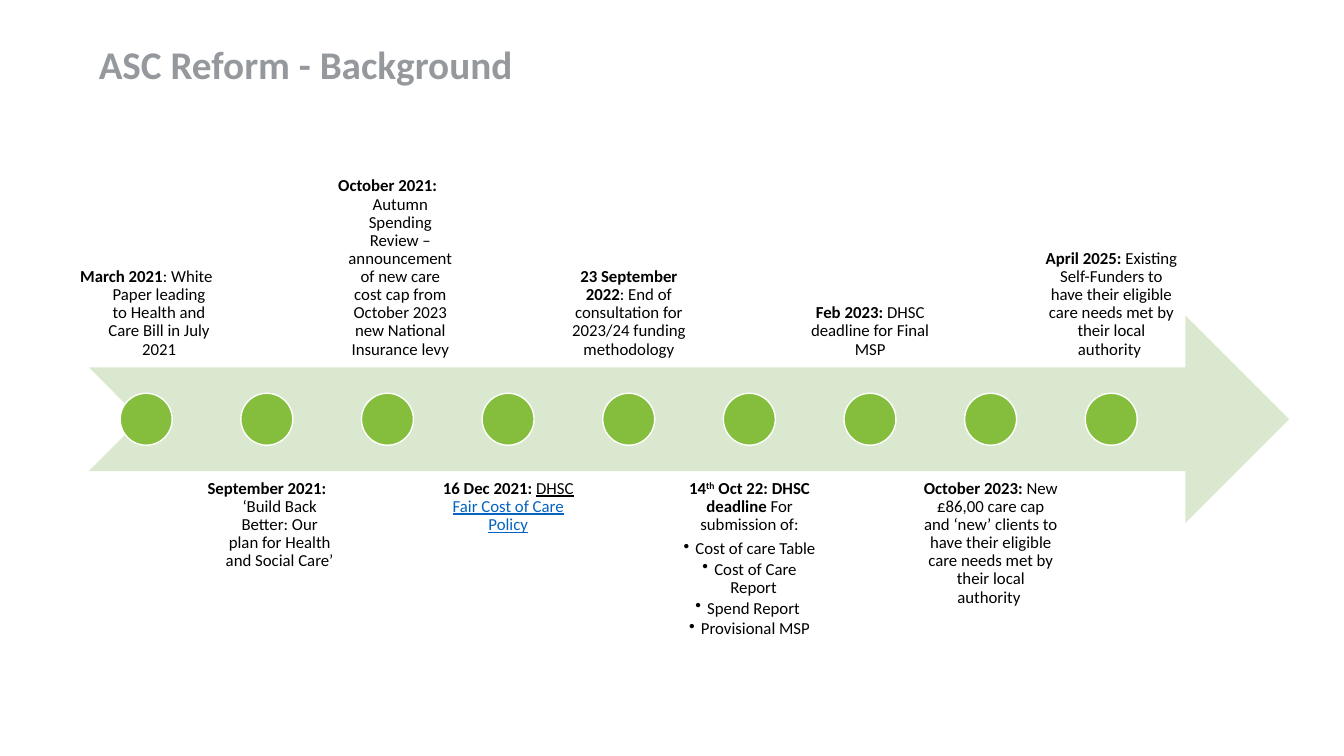
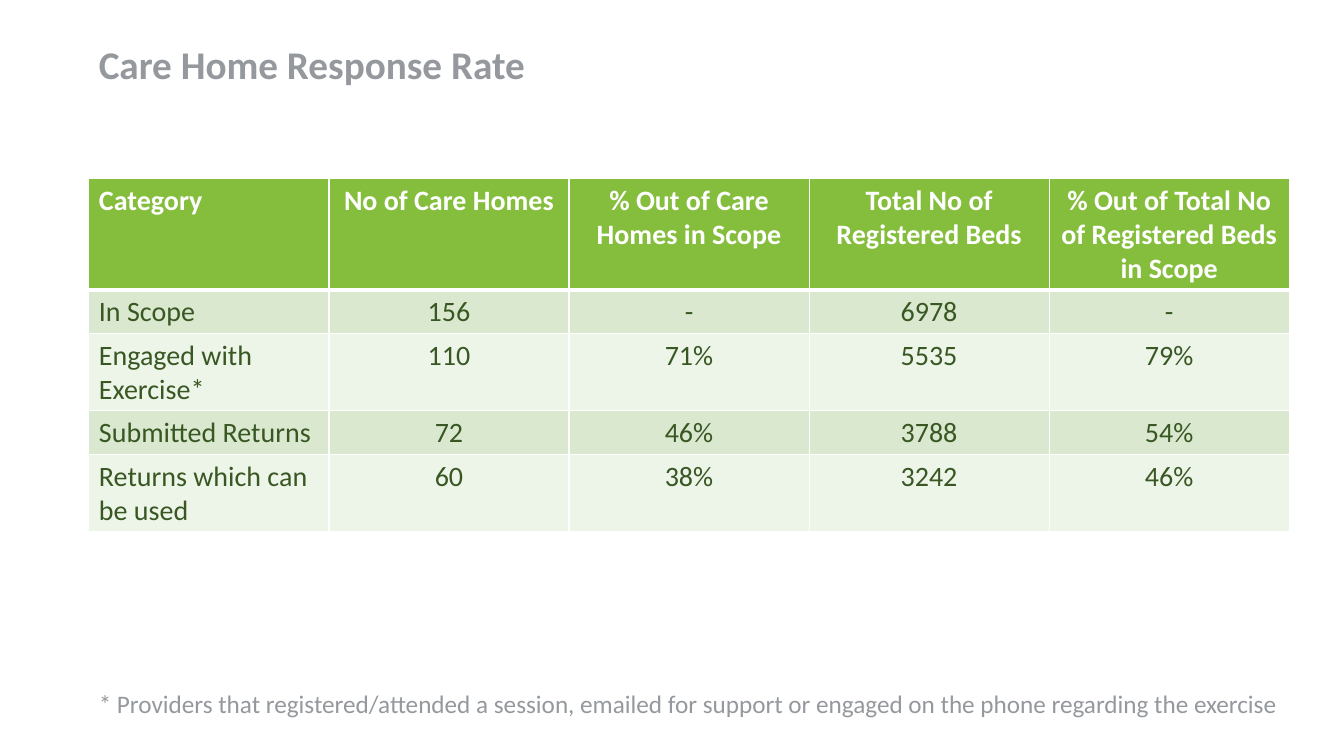
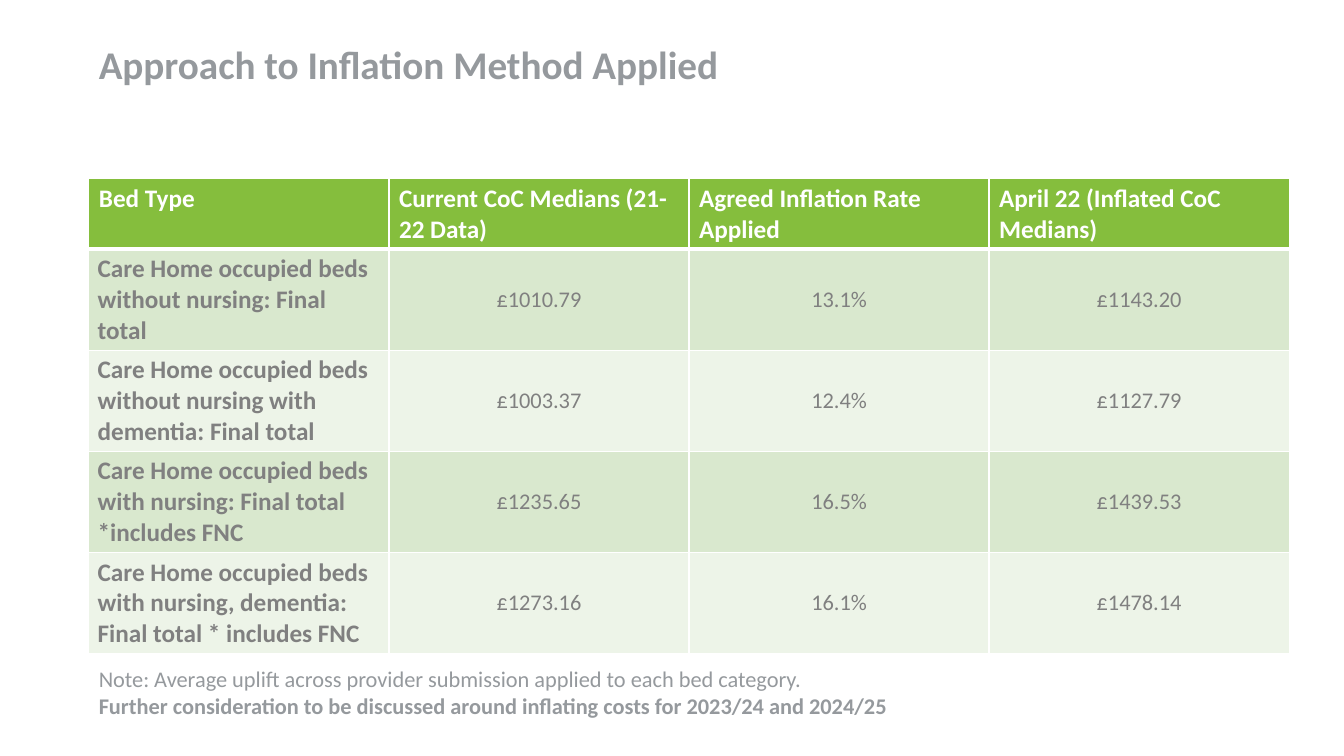
from dataclasses import dataclass
from lxml import etree
from pptx import Presentation
from pptx.dml.color import RGBColor
from pptx.enum.shapes import MSO_SHAPE
from pptx.enum.text import MSO_ANCHOR, PP_ALIGN
from pptx.oxml.ns import qn
from pptx.util import Cm, Pt

ARROW, DOT = MSO_SHAPE.NOTCHED_RIGHT_ARROW, MSO_SHAPE.OVAL
LEFT, CENTER = PP_ALIGN.LEFT, PP_ALIGN.CENTER
TOP, MIDDLE, BOTTOM = MSO_ANCHOR.TOP, MSO_ANCHOR.MIDDLE, MSO_ANCHOR.BOTTOM


@dataclass(frozen=True)
class Theme:
    font: str = "Calibri"
    green: str = "85BE3D"
    band: str = "D9E8CE"
    pale: str = "EDF4E8"
    forest: str = "385723"
    grey: str = "95999D"
    label: str = "808080"
    link: str = "0563C1"
    white: str = "FFFFFF"
    black: str = "000000"
    title_size: int = 28
    large: int = 20
    medium: int = 18
    small: int = 16
    event_size: int = 12
    left: float = 2.24
    width: float = 30.25
    table_top: float = 4.5


@dataclass(frozen=True)
class Words:
    text: str
    bold: bool = False
    color: str = ""
    underline: bool = False
    raised: bool = False


class Deck:
    def __init__(self, theme):
        self.theme = theme
        self.prs = Presentation()
        self.prs.slide_width, self.prs.slide_height = Cm(33.87), Cm(19.05)
        self.slide = None

    def new_slide(self, title):
        self.slide = self.prs.slides.add_slide(self.prs.slide_layouts[6])
        frame = self.text_box(self.theme.left, 1.02, 23.16, 2.49)
        paragraph = frame.paragraphs[0]
        paragraph.line_spacing = 0.9
        self.add_words(paragraph, [Words(title, bold=True)],
                       self.theme.title_size, self.theme.grey)

    def text_box(self, left, top, width, height, anchor=TOP, inset=None):
        box = self.slide.shapes.add_textbox(Cm(left), Cm(top), Cm(width), Cm(height))
        frame = box.text_frame
        frame.word_wrap = True
        frame.vertical_anchor = anchor
        if inset is not None:
            frame.margin_left = frame.margin_right = Cm(inset)
            frame.margin_top = frame.margin_bottom = Cm(inset)
        return frame

    def add_words(self, paragraph, pieces, size, color, align=LEFT):
        paragraph.alignment = align
        for piece in pieces:
            run = paragraph.add_run()
            run.text = piece.text
            font = run.font
            font.name, font.size = self.theme.font, Pt(size)
            font.bold = piece.bold
            font.color.rgb = RGBColor.from_string(piece.color or color)
            if piece.underline:
                font.underline = True
            if piece.raised:
                run._r.get_or_add_rPr().set("baseline", "30000")

    def indent(self, paragraph, margin, first_line):
        properties = paragraph._p.get_or_add_pPr()
        properties.set("marL", str(Cm(margin)))
        properties.set("indent", str(Cm(first_line)))
        return properties

    def shape(self, preset, left, top, width, height, fill, outline=None):
        shape = self.slide.shapes.add_shape(
            preset, Cm(left), Cm(top), Cm(width), Cm(height))
        shape.shadow.inherit = False
        shape.fill.solid()
        shape.fill.fore_color.rgb = RGBColor.from_string(fill)
        if outline:
            shape.line.color.rgb = RGBColor.from_string(outline)
            shape.line.width = Pt(1)
        else:
            shape.line.fill.background()

    def event(self, left, top, anchor, pieces, hanging=False, bullets=()):
        theme = self.theme
        frame = self.text_box(left, top, 3.84, 5.23, anchor, 0.23)
        heading = frame.paragraphs[0]
        heading.line_spacing = 0.9
        if hanging:
            self.indent(heading, 0.64, -0.95)
        self.add_words(heading, pieces, theme.event_size, theme.black, CENTER)
        for index, item in enumerate(bullets):
            paragraph = frame.add_paragraph()
            paragraph.level = 1
            properties = self.indent(paragraph, 0.3, -0.3)
            etree.SubElement(properties, qn("a:buChar")).set("char", "•")
            paragraph.line_spacing = 0.9
            paragraph.space_before = Pt(1.8 if index else 4.2)
            self.add_words(paragraph, [Words(item)], theme.event_size, theme.black, CENTER)

    def borders(self, cell, top=1, bottom=1):
        properties = cell._tc.get_or_add_tcPr()
        for side, weight in (("L", 1), ("R", 1), ("T", top), ("B", bottom)):
            line = etree.SubElement(properties, qn(f"a:ln{side}"), w=str(Pt(weight)))
            fill = etree.SubElement(line, qn("a:solidFill"))
            etree.SubElement(fill, qn("a:srgbClr"), val=self.theme.white)

    def table(self, rows, heights, style_cell):
        theme = self.theme
        columns = len(rows[0])
        table = self.slide.shapes.add_table(
            len(rows), columns, Cm(theme.left), Cm(theme.table_top),
            Cm(theme.width), Cm(sum(heights))).table
        table.horz_banding = False
        for column in table.columns:
            column.width = Cm(theme.width / columns)
        for r, (values, height) in enumerate(zip(rows, heights)):
            table.rows[r].height = Cm(height)
            fill = theme.green if r == 0 else (theme.pale, theme.band)[r % 2]
            for c, value in enumerate(values):
                cell = table.cell(r, c)
                self.borders(cell, 3 if r == 1 else 1, 3 if r == 0 else 1)
                cell.fill.solid()
                cell.fill.fore_color.rgb = RGBColor.from_string(fill)
                size, color, bold, align, anchor = style_cell(r, c)
                cell.vertical_anchor = anchor
                if anchor == MIDDLE:
                    cell.margin_left = cell.margin_right = 0
                elif bold and r:
                    cell.margin_left = cell.margin_right = Cm(0.22)
                    cell.margin_top = cell.margin_bottom = Cm(0.11)
                self.add_words(cell.text_frame.paragraphs[0], [Words(value, bold)],
                               size, color, align)

    def note(self, top, width, height, size, lines):
        frame = self.text_box(self.theme.left, top, width, height)
        for index, line in enumerate(lines):
            paragraph = frame.add_paragraph() if index else frame.paragraphs[0]
            self.add_words(paragraph, [line], size, self.theme.grey)


def background(deck):
    theme = deck.theme
    deck.new_slide("ASC Reform - Background")
    deck.shape(ARROW, theme.left, 7.95, theme.width, 5.23, theme.band)
    events = [
        dict(pieces=[Words("March 2021", True),
                     Words(": White Paper leading to Health and Care Bill in July 2021")],
             hanging=True),
        dict(pieces=[Words("September 2021: ", True),
                     Words("‘Build Back Better: Our plan for Health and Social Care’")],
             hanging=True),
        dict(pieces=[Words("October 2021: ", True),
                     Words("Autumn Spending Review – announcement of new care cost cap "
                           "from October 2023 new National Insurance levy")],
             hanging=True),
        dict(pieces=[Words("16 Dec 2021: ", True), Words("DHSC ", underline=True),
                     Words("Fair Cost of Care Policy", color=theme.link, underline=True)]),
        dict(pieces=[Words("23 September 2022", True),
                     Words(": End of consultation for 2023/24 funding methodology")]),
        dict(pieces=[Words("14", True), Words("th", True, raised=True),
                     Words(" Oct 22: DHSC deadline ", True), Words("For submission of:")],
             bullets=("Cost of care Table ", "Cost of Care Report ",
                      "Spend Report ", "Provisional MSP")),
        dict(pieces=[Words("Feb 2023: ", True), Words("DHSC deadline for Final MSP")]),
        dict(pieces=[Words("October 2023: ", True),
                     Words("New £86,00 care cap and ‘new’ clients to have their eligible "
                           "care needs met by their local authority ")]),
        dict(pieces=[Words("April 2025: ", True),
                     Words("Existing Self-Funders to have their eligible care needs met "
                           "by their local authority ")]),
    ]
    pitch = 3.04
    for index, event in enumerate(events):
        top, anchor = (11.86, TOP) if index % 2 else (4.04, BOTTOM)
        deck.event(1.77 + index * pitch, top, anchor, **event)
        deck.shape(DOT, 3.03 + index * pitch, 9.91, 1.31, 1.31, theme.green, theme.white)


def response_rate(deck):
    theme = deck.theme

    def style_cell(row, column):
        color = theme.forest if row else theme.white
        return theme.large, color, row == 0, CENTER if column else LEFT, TOP

    deck.new_slide("Care Home Response Rate")
    deck.table([
        ("Category", "No of Care Homes", "% Out of Care Homes in Scope",
         "Total No of Registered Beds", "% Out of Total No of Registered Beds in Scope"),
        ("In Scope", "156", "-", "6978", "-"),
        ("Engaged with Exercise*", "110", "71%", "5535", "79%"),
        ("Submitted Returns", "72", "46%", "3788", "54%"),
        ("Returns which can be used", "60", "38%", "3242", "46%"),
    ], (2.8, 1.1, 1.95, 1.1, 1.95), style_cell)
    deck.note(17.22, 30.56, 1.02, theme.medium, [
        Words("* Providers that registered/attended a session, emailed for support "
              "or engaged on the phone regarding the exercise")])


def inflation(deck):
    theme = deck.theme

    def style_cell(row, column):
        if row == 0:
            return theme.medium, theme.white, True, LEFT, TOP
        if column == 0:
            return theme.medium, theme.label, True, LEFT, TOP
        return theme.small, theme.label, False, CENTER, MIDDLE

    deck.new_slide("Approach to Inflation Method Applied")
    deck.table([
        ("Bed Type", "Current CoC Medians (21-22 Data)",
         "Agreed Inflation Rate Applied", "April 22 (Inflated CoC Medians)"),
        ("Care Home occupied beds without nursing: Final total",
         "£1010.79", "13.1%", "£1143.20"),
        ("Care Home occupied beds without nursing with dementia: Final total",
         "£1003.37", "12.4%", "£1127.79"),
        ("Care Home occupied beds with nursing: Final total *includes FNC",
         "£1235.65", "16.5%", "£1439.53"),
        ("Care Home occupied beds with nursing, dementia: Final total * includes FNC",
         "£1273.16", "16.1%", "£1478.14"),
    ], (1.78, 2.55, 2.55, 2.55, 2.55), style_cell)
    deck.note(16.64, theme.width, 1.63, theme.small, [
        Words("Note: Average uplift across provider submission applied to each bed category."),
        Words("Further consideration to be discussed around inflating costs "
              "for 2023/24 and 2024/25", True)])


def main():
    deck = Deck(Theme())
    background(deck)
    response_rate(deck)
    inflation(deck)
    deck.prs.save("out.pptx")


if __name__ == "__main__":
    main()
